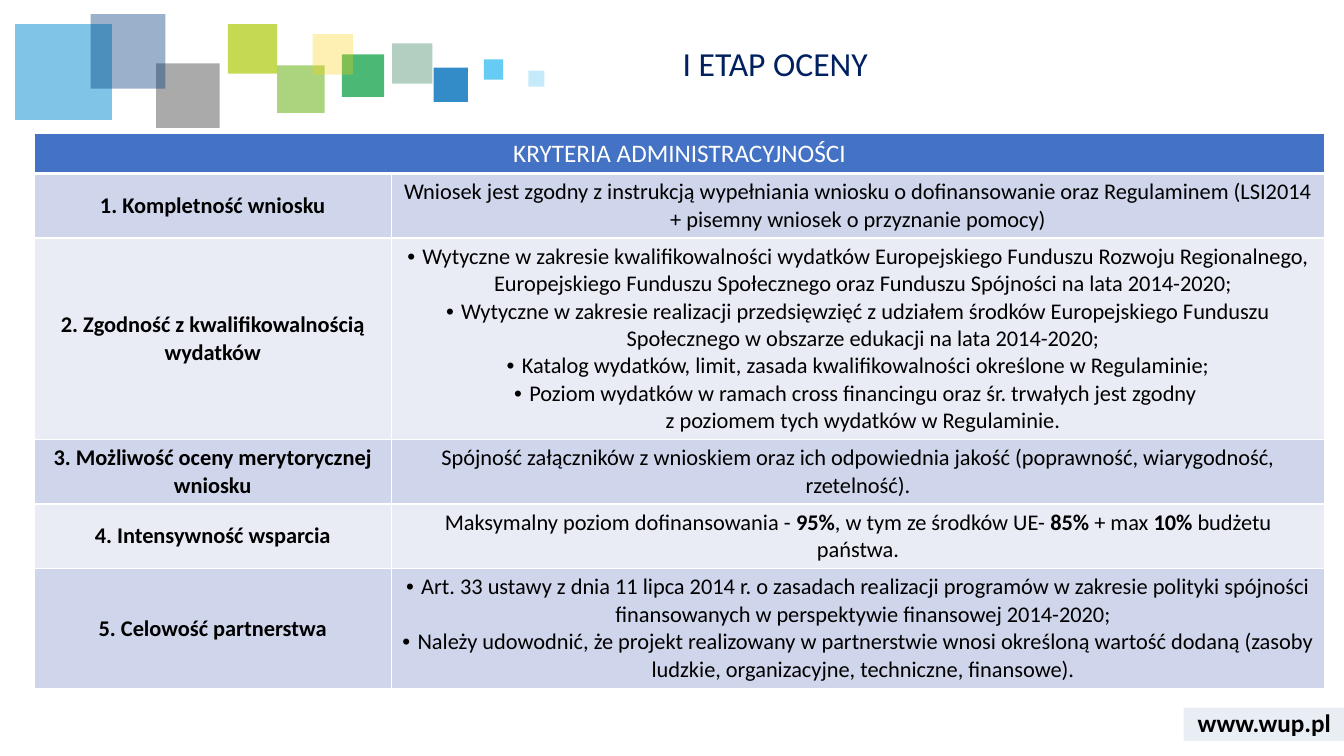
from lxml.etree import SubElement
from pptx import Presentation
from pptx.dml.color import RGBColor
from pptx.enum.shapes import MSO_SHAPE
from pptx.enum.text import MSO_ANCHOR, PP_ALIGN
from pptx.oxml.ns import qn
from pptx.util import Inches, Pt

FONT = "Calibri"
TITLE = "I ETAP OCENY"
ADDRESS = "www.wup.pl"
HEADING = "KRYTERIA ADMINISTRACYJNOŚCI"
BULLET = "•"
BOLD_MARK = "**"

CRITERIA = [
    ("1. Kompletność wniosku", False, [
        "Wniosek jest zgodny z instrukcją wypełniania wniosku o dofinansowanie "
        "oraz Regulaminem (LSI2014 + pisemny wniosek o przyznanie pomocy)",
    ]),
    ("2. Zgodność z kwalifikowalnością wydatków", True, [
        " Wytyczne w zakresie kwalifikowalności wydatków Europejskiego Funduszu Rozwoju "
        "Regionalnego, Europejskiego Funduszu Społecznego oraz Funduszu Spójności "
        "na lata 2014-2020;",
        " Wytyczne w zakresie realizacji przedsięwzięć z udziałem środków Europejskiego "
        "Funduszu Społecznego w obszarze edukacji na lata 2014-2020;",
        " Katalog wydatków, limit, zasada kwalifikowalności określone w Regulaminie;",
        " Poziom wydatków w ramach cross financingu oraz śr. trwałych jest zgodny \n"
        "z poziomem tych wydatków w Regulaminie.",
    ]),
    ("3. Możliwość oceny merytorycznej wniosku", False, [
        "Spójność załączników z wnioskiem oraz ich odpowiednia jakość "
        "(poprawność, wiarygodność, rzetelność).",
    ]),
    ("4. Intensywność wsparcia", False, [
        "Maksymalny poziom dofinansowania - **95%**, w tym ze środków UE- **85% **"
        "+ max **10% **budżetu państwa.",
    ]),
    ("5. Celowość partnerstwa", True, [
        " Art. 33 ustawy z dnia 11 lipca 2014 r. o zasadach realizacji programów w zakresie "
        "polityki spójności finansowanych w perspektywie finansowej 2014-2020;",
        " Należy udowodnić, że projekt realizowany w partnerstwie wnosi określoną wartość "
        "dodaną (zasoby ludzkie, organizacyjne, techniczne, finansowe).",
    ]),
]
COLUMN_WIDTHS = (3.54, 9.26)
ROW_HEIGHTS = (0.4, 0.64, 2.0, 0.64, 0.64, 1.19)
HEADING_FILL = "4472C4"
BAND_FILLS = ("CFD5EA", "E9EBF5")

SQUARES = [
    (3.89, 0.43, 0.4, 0.4, "006138", 30),
    (4.3, 0.67, 0.34, 0.34, "006EB9", 80),
    (3.39, 0.54, 0.42, 0.42, "009A3C", 70),
    (0.15, 0.24, 0.96, 0.95, "028BD3", 50),
    (2.75, 0.65, 0.47, 0.47, "75B82A", 60),
    (1.55, 0.63, 0.63, 0.64, "575757", 50),
    (0.9, 0.14, 0.74, 0.74, "003D7C", 40),
    (4.8, 0.59, 0.19, 0.2, "40C0F1", 80),
    (2.26, 0.24, 0.49, 0.49, "AFCA0B", 70),
    (3.1, 0.34, 0.4, 0.4, "FED000", 30),
    (5.24, 0.7, 0.16, 0.16, "40C0F1", 30),
]
ADDRESS_BAND = (11.74, 7.02, 1.6, 0.33, "2F5597", 10)


def paint(fill, color):
    fill.solid()
    fill.fore_color.rgb = RGBColor.from_string(color)


def add_run(paragraph, text, size, color, bold=False):
    run = paragraph.add_run()
    run.text = text
    run.font.name = FONT
    run.font.size = Pt(size)
    run.font.bold = bold
    paint(run.font.fill, color)


def add_tinted_rectangle(shapes, left, top, width, height, color, opacity):
    rectangle = shapes.add_shape(MSO_SHAPE.RECTANGLE, Inches(left), Inches(top),
                                 Inches(width), Inches(height))
    rectangle.shadow.inherit = False
    rectangle.line.fill.background()
    paint(rectangle.fill, color)
    tint = next(rectangle.fill._xPr.iter(qn("a:srgbClr")))
    SubElement(tint, qn("a:alpha"), val=str(opacity * 1000))


def add_bullet(paragraph):
    properties = paragraph._p.get_or_add_pPr()
    properties.set("marL", str(Inches(0.1)))
    properties.set("indent", str(-Inches(0.1)))
    SubElement(properties, qn("a:buFont"), typeface="Arial")
    SubElement(properties, qn("a:buChar"), char=BULLET)


def style_cell(cell, color, top=1, bottom=1):
    properties = cell._tc.get_or_add_tcPr()
    for side, weight in (("L", 1), ("R", 1), ("T", top), ("B", bottom)):
        border = SubElement(properties, qn(f"a:ln{side}"), w=str(Pt(weight)))
        border_fill = SubElement(border, qn("a:solidFill"))
        SubElement(border_fill, qn("a:srgbClr"), val="FFFFFF")
    paint(cell.fill, color)


def write_requirements(cell, bulleted, requirements):
    for index, requirement in enumerate(requirements):
        frame = cell.text_frame
        paragraph = frame.add_paragraph() if index else frame.paragraphs[0]
        paragraph.alignment = PP_ALIGN.CENTER
        if bulleted:
            add_bullet(paragraph)
        for line_number, line in enumerate(requirement.split("\n")):
            if line_number:
                paragraph.add_line_break()
            for part_number, part in enumerate(line.split(BOLD_MARK)):
                add_run(paragraph, part, 16, "000000", part_number % 2 == 1)


def add_criteria_table(slide):
    table = slide.shapes.add_table(len(ROW_HEIGHTS), len(COLUMN_WIDTHS), Inches(0.34),
                                   Inches(1.32), Inches(sum(COLUMN_WIDTHS)),
                                   Inches(sum(ROW_HEIGHTS))).table
    table.horz_banding = False
    for column, width in zip(table.columns, COLUMN_WIDTHS):
        column.width = Inches(width)
    for row, height in zip(table.rows, ROW_HEIGHTS):
        row.height = Inches(height)

    heading = table.cell(0, 0)
    heading.merge(table.cell(0, 1))
    for cell in table.rows[0].cells:
        style_cell(cell, HEADING_FILL, bottom=3)
    heading_line = heading.text_frame.paragraphs[0]
    heading_line.alignment = PP_ALIGN.CENTER
    add_run(heading_line, HEADING, 18, "FFFFFF")

    for number, (criterion, bulleted, requirements) in enumerate(CRITERIA, 1):
        name_cell, requirement_cell = table.rows[number].cells
        for cell in (name_cell, requirement_cell):
            style_cell(cell, BAND_FILLS[(number - 1) % 2], top=3 if number == 1 else 1)
        name_cell.vertical_anchor = MSO_ANCHOR.MIDDLE
        name_line = name_cell.text_frame.paragraphs[0]
        name_line.alignment = PP_ALIGN.CENTER
        add_run(name_line, criterion, 16, "000000", True)
        write_requirements(requirement_cell, bulleted, requirements)


def add_title(slide):
    title = slide.shapes.title
    title.left, title.top = Inches(6.67), Inches(0.42)
    title.width, title.height = Inches(6.36), Inches(0.55)
    title.text_frame.vertical_anchor = MSO_ANCHOR.TOP
    title_line = title.text_frame.paragraphs[0]
    title_line.alignment = PP_ALIGN.LEFT
    title_line.line_spacing = 0.9
    add_run(title_line, TITLE, 24, "002060")


def add_address(slide):
    add_tinted_rectangle(slide.shapes, *ADDRESS_BAND)
    address = slide.shapes.add_textbox(Inches(11.74), Inches(6.97), Inches(1.6), Inches(0.4))
    address.text_frame.word_wrap = True
    address.text_frame.vertical_anchor = MSO_ANCHOR.MIDDLE
    address_line = address.text_frame.paragraphs[0]
    address_line.alignment = PP_ALIGN.CENTER
    add_run(address_line, ADDRESS, 18, "000000", True)


def main():
    deck = Presentation()
    deck.slide_width, deck.slide_height = Inches(13.33), Inches(7.5)
    slide = deck.slides.add_slide(deck.slide_layouts[5])
    mosaic = slide.shapes.add_group_shape()
    for square in SQUARES:
        add_tinted_rectangle(mosaic.shapes, *square)
    add_address(slide)
    add_criteria_table(slide)
    add_title(slide)
    deck.save("out.pptx")


if __name__ == "__main__":
    main()
